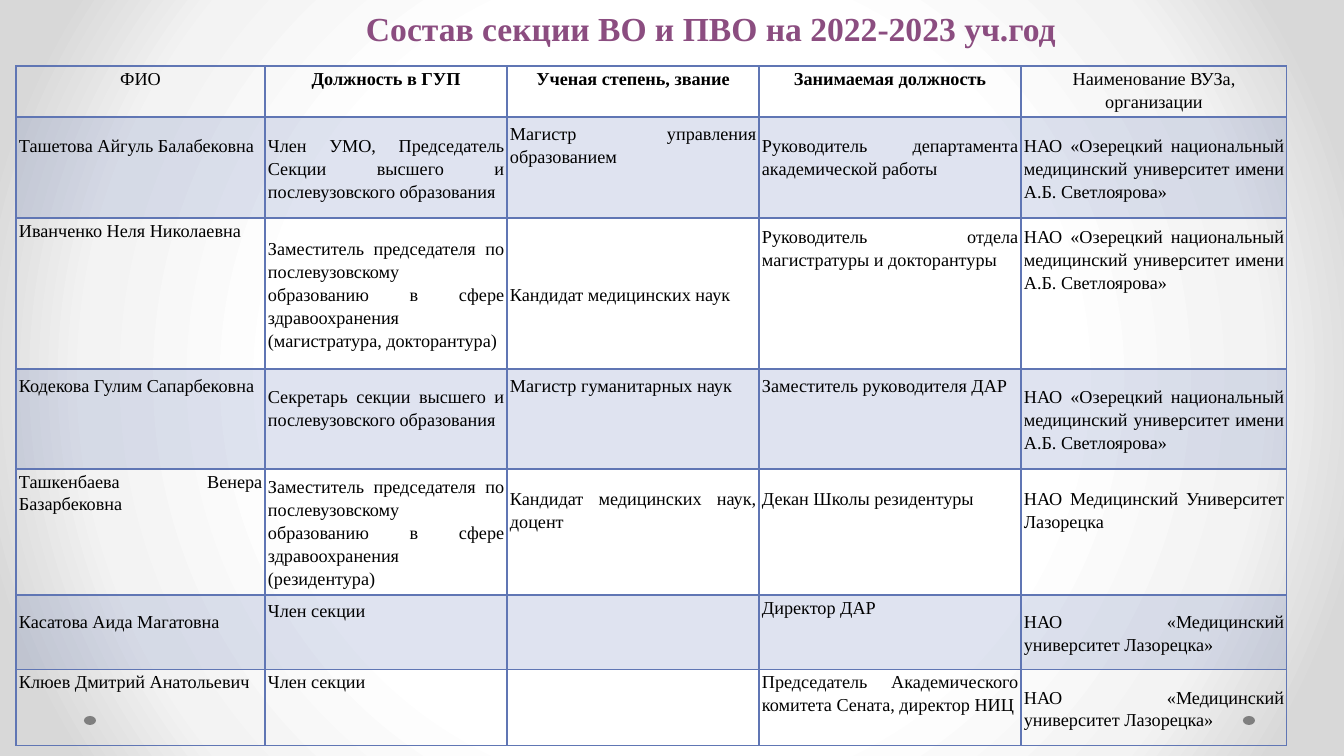
import pptx
import pptx.util
import pptx.dml.color
import pptx.enum.shapes
import pptx.enum.text
import pptx.oxml
import pptx.oxml.ns

EMU_PER_PX = 914400 / 100.8
LINE_HEIGHT = 23
FONT = "Times New Roman"
COLORS = {"title": "8B4D80", "accent": "6076B4", "text": "000000", "dot": "7F7F7F"}
BACKGROUND_STOPS = [(0, "FFFFFF"), (50, "FFFFFF"), (76, "F3F3F3"), (92, "D8D8D8"), (100, "D8D8D8")]
ALIGN = pptx.enum.text.PP_ALIGN
ANCHOR = pptx.enum.text.MSO_ANCHOR

COLUMN_WIDTHS = [249, 242, 252, 262, 266]
ROW_HEIGHTS = [51, 101, 151, 100, 126, 75, 76]
HEADERS = [
    ("ФИО", False),
    ("Должность в ГУП", True),
    ("Ученая степень, звание", True),
    ("Занимаемая должность", True),
    ("Наименование ВУЗа, организации", False),
]
TOP = None
NATIONAL = "НАО «Озерецкий национальный медицинский университет имени А.Б. Светлоярова»"
REGIONAL = "НАО «Медицинский университет Лазорецка»"
DEPUTY = "Заместитель председателя по послевузовскому образованию в сфере здравоохранения "
MEMBERS_WITH_FREE_LINES = [
    [("Ташетова Айгуль Балабековна", 2),
     ("Член УМО, Председатель Секции высшего и послевузовского образования", 0),
     ("Магистр управления образованием", 2),
     ("Руководитель департамента академической работы", 1),
     (NATIONAL, 0)],
    [("Иванченко Неля Николаевна", TOP),
     (DEPUTY + "(магистратура, докторантура)", 0),
     ("Кандидат медицинских наук", 0),
     ("Руководитель отдела магистратуры и докторантуры", 4),
     (NATIONAL, 3)],
    [("Кодекова Гулим Сапарбековна", 3),
     ("Секретарь секции высшего и послевузовского образования", 1),
     ("Магистр гуманитарных наук", 3),
     ("Заместитель руководителя ДАР", 3),
     (NATIONAL, 0)],
    [("Ташкенбаева Венера Базарбековна", TOP),
     (DEPUTY + "(резидентура)", 0),
     ("Кандидат медицинских наук, доцент", 2),
     ("Декан Школы резидентуры", 3),
     ("НАО Медицинский Университет Лазорецка", 2)],
    [("Касатова Аида Магатовна", 1),
     ("Член секции", 2),
     ("", TOP),
     ("Директор ДАР", TOP),
     (REGIONAL, 0)],
    [("Клюев Дмитрий Анатольевич", TOP),
     ("Член секции", TOP),
     ("", TOP),
     ("Председатель Академического комитета Сената, директор НИЦ", TOP),
     (REGIONAL, 0)],
]


def px(length):
    return pptx.util.Emu(round(length * EMU_PER_PX))


def rgb(name):
    return pptx.dml.color.RGBColor.from_string(COLORS[name])


def set_attributes(target, values):
    for name, value in values.items():
        setattr(target, name, value)


def write_text(text_frame, text, size, color, bold, alignment, spacing):
    paragraph = text_frame.paragraphs[0]
    set_attributes(paragraph, {"alignment": alignment, "line_spacing": spacing})
    run = paragraph.add_run()
    run.text = text
    set_attributes(run.font, {"name": FONT, "size": pptx.util.Pt(size), "bold": bold})
    run.font.color.rgb = rgb(color)


def paint_background(slide):
    stops = "".join(
        f'<a:gs pos="{position * 1000}"><a:srgbClr val="{color}"/></a:gs>'
        for position, color in BACKGROUND_STOPS
    )
    gradient = pptx.oxml.parse_xml(
        f'<a:gradFill {pptx.oxml.ns.nsdecls("a")} rotWithShape="1"><a:gsLst>{stops}</a:gsLst>'
        '<a:path path="circle"><a:fillToRect l="50000" t="50000" r="50000" b="50000"/></a:path>'
        "</a:gradFill>"
    )
    slide.background.fill.solid()
    properties = slide.element.find(".//" + pptx.oxml.ns.qn("p:bgPr"))
    properties.replace(properties[0], gradient)


def add_dots(slide, left, top, width, height):
    dot_width = 12
    for dot_left in (left, left + width - dot_width):
        dot = slide.shapes.add_shape(
            pptx.enum.shapes.MSO_SHAPE.OVAL, px(dot_left), px(top), px(dot_width), px(height)
        )
        dot.shadow.inherit = False
        dot.fill.solid()
        dot.fill.fore_color.rgb = rgb("dot")
        dot.line.fill.background()


def add_title(slide, left, top, width, height):
    box = slide.shapes.add_textbox(px(left), px(top), px(width), px(height))
    set_attributes(box.text_frame, {
        "word_wrap": True, "margin_left": 0, "margin_right": 0, "margin_top": px(1), "margin_bottom": 0,
    })
    write_text(box.text_frame, "Состав секции ВО и ПВО на 2022-2023 уч.год",
               24, "title", True, ALIGN.CENTER, None)


def set_borders(cell, widths):
    properties = cell._tc.get_or_add_tcPr()
    for index, (side, width) in enumerate(widths.items()):
        properties.insert(index, pptx.oxml.parse_xml(
            f'<a:ln{side} {pptx.oxml.ns.nsdecls("a")} w="{pptx.util.Pt(width)}"><a:solidFill>'
            f'<a:srgbClr val="{COLORS["accent"]}"/></a:solidFill></a:ln{side}>'
        ))


def format_cell(cell, row, free_lines):
    set_attributes(cell, {
        "margin_left": px(3), "margin_right": px(3), "margin_top": 0,
        "margin_bottom": px((free_lines or 0) * LINE_HEIGHT),
        "vertical_anchor": ANCHOR.TOP if free_lines is TOP else ANCHOR.MIDDLE,
    })
    if row % 2:
        cell.fill.solid()
        cell.fill.fore_color.rgb = rgb("accent")
        color = cell._tc.tcPr.find(".//" + pptx.oxml.ns.qn("a:srgbClr"))
        color.append(pptx.oxml.parse_xml(f'<a:alpha {pptx.oxml.ns.nsdecls("a")} val="20000"/>'))
    else:
        cell.fill.background()
    set_borders(cell, {"L": 1, "R": 1, "T": 2 if row == 1 else 1, "B": 2 if row == 0 else 1})


def add_members_table(slide, left, top):
    frame = slide.shapes.add_table(
        len(ROW_HEIGHTS), len(COLUMN_WIDTHS), px(left), px(top),
        px(sum(COLUMN_WIDTHS)), px(sum(ROW_HEIGHTS)),
    )
    table = frame.table
    set_attributes(table, {"first_row": False, "horz_banding": False})
    for column, width in zip(table.columns, COLUMN_WIDTHS):
        column.width = px(width)
    for row, height in zip(table.rows, ROW_HEIGHTS):
        row.height = px(height)
    for column, (text, bold) in enumerate(HEADERS):
        cell = table.cell(0, column)
        format_cell(cell, 0, TOP)
        write_text(cell.text_frame, text, 13, "text", bold, ALIGN.CENTER, 1.15)
    for row, member in enumerate(MEMBERS_WITH_FREE_LINES, start=1):
        for column, (text, free_lines) in enumerate(member):
            cell = table.cell(row, column)
            format_cell(cell, row, free_lines)
            if text:
                write_text(cell.text_frame, text, 13, "text", False, ALIGN.JUSTIFY, 1.15)


def build_section_slide(presentation):
    slide = presentation.slides.add_slide(presentation.slide_layouts[6])
    paint_background(slide)
    add_dots(slide, 84, 716, 1171, 9)
    add_members_table(slide, 16, 66)
    add_title(slide, 97, 7, 1228, 41)


def main():
    presentation = pptx.Presentation()
    set_attributes(presentation, {"slide_width": px(1344), "slide_height": px(756)})
    build_section_slide(presentation)
    presentation.save("out.pptx")


if __name__ == "__main__":
    main()
